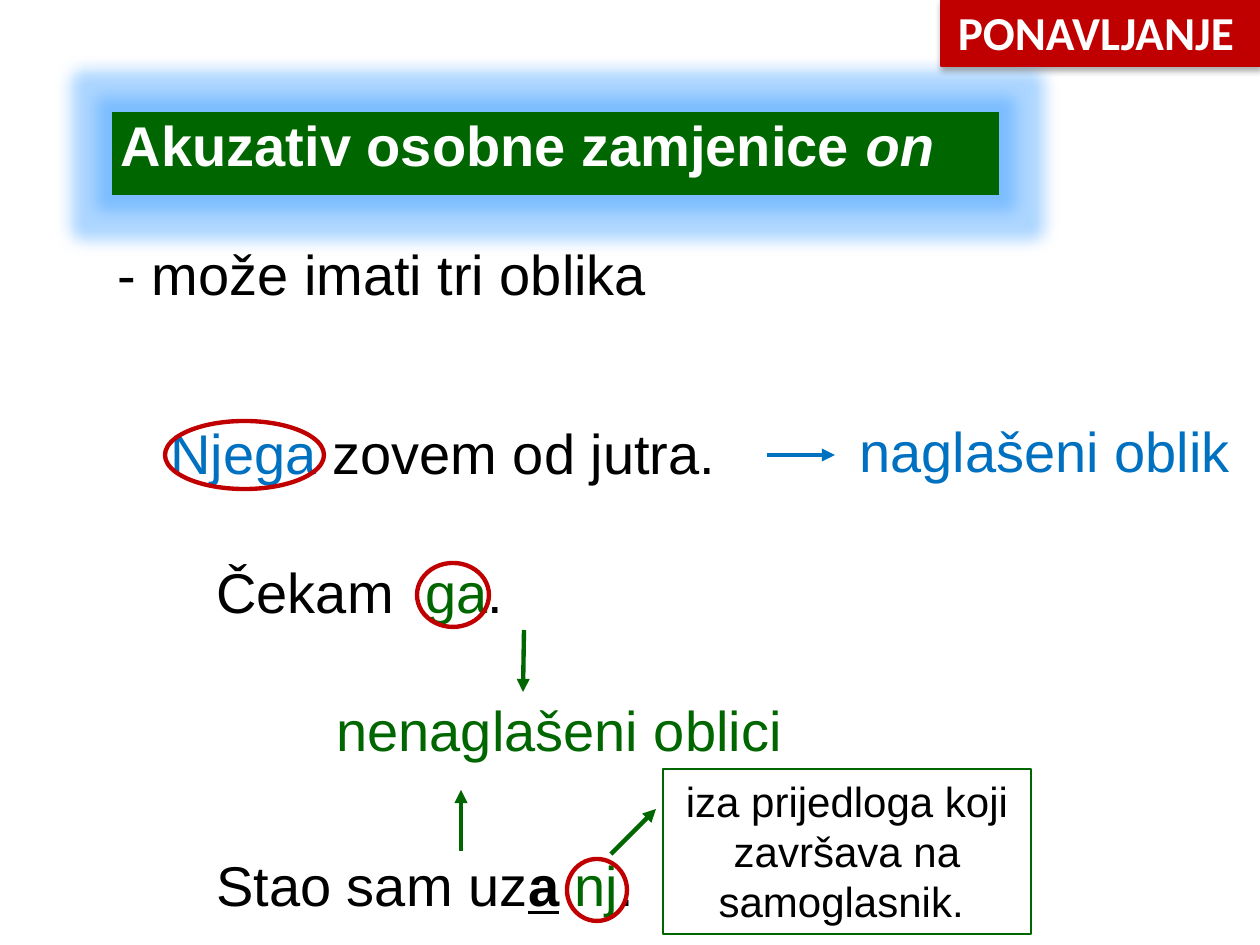
from lxml import etree
from pptx import Presentation
from pptx.dml.color import RGBColor
from pptx.enum.shapes import MSO_CONNECTOR, MSO_SHAPE
from pptx.enum.text import MSO_ANCHOR, MSO_AUTO_SIZE, PP_ALIGN
from pptx.oxml import parse_xml
from pptx.oxml.ns import qn
from pptx.util import Emu, Pt

RECT, OVAL = MSO_SHAPE.RECTANGLE, MSO_SHAPE.OVAL
STRAIGHT = MSO_CONNECTOR.STRAIGHT
LEFT, CENTER, RIGHT = PP_ALIGN.LEFT, PP_ALIGN.CENTER, PP_ALIGN.RIGHT
TOP, BOTTOM = MSO_ANCHOR.TOP, MSO_ANCHOR.BOTTOM
PX = 914400 / 126
GREEN, BLUE, RED, BLACK, WHITE = "006600", "0070C0", "C00000", "000000", "FFFFFF"
NS = 'xmlns:a="http://schemas.openxmlformats.org/drawingml/2006/main"'
GLOW = (f'<a:effectLst {NS}><a:glow rad="228600"><a:srgbClr val="3399FF">'
        '<a:alpha val="40000"/></a:srgbClr></a:glow></a:effectLst>')
SHADOW = (f'<a:effectLst {NS}><a:outerShdw blurRad="44450" dist="27940" dir="5400000" '
          'algn="ctr" rotWithShape="0"><a:srgbClr val="000000">'
          '<a:alpha val="32000"/></a:srgbClr></a:outerShdw></a:effectLst>')


def add_outline(kind, box, fill=None, line=None, width=2.5, effect=None):
    sp = s.shapes.add_shape(kind, *[Emu(round(v * PX)) for v in box])
    sp.shadow.inherit = False
    if fill:
        sp.fill.solid()
        sp.fill.fore_color.rgb = RGBColor.from_string(fill)
    else:
        sp.fill.background()
    if line:
        sp.line.color.rgb = RGBColor.from_string(line)
        sp.line.width = Pt(width)
    else:
        sp.line.fill.background()
    if effect:
        props = sp._element.spPr
        props.replace(props.find(qn("a:effectLst")), parse_xml(effect))
    return sp


def set_text(sp, runs, size=32, font="Arial", align=LEFT, anchor=TOP):
    """Fill a shape with one paragraph of (text, colour, format values) runs."""
    tf = sp.text_frame
    tf.word_wrap, tf.auto_size, tf.vertical_anchor = True, MSO_AUTO_SIZE.NONE, anchor
    p = tf.paragraphs[0]
    p.alignment = align
    for text, colour, fmt in runs:
        r = p.add_run()
        r.text = text
        r.font.color.rgb = RGBColor.from_string(colour)
        for name, value in {"name": font, "size": Pt(size), **fmt}.items():
            setattr(r.font, name, value)
    return p


prs = Presentation()
prs.slide_width, prs.slide_height = Emu(round(1260 * PX)), Emu(round(945 * PX))
s = prs.slides.add_slide(prs.slide_layouts[5])

# Title on its glowing bar
add_outline(RECT, (112, 112, 887, 83), fill=GREEN, effect=GLOW)
title = s.shapes.title
title.left, title.top, title.width, title.height = [
    Emu(round(v * PX)) for v in (112, 77, 944, 106)]
s.shapes._spTree.append(title._element)  # bring in front of the bar
p = set_text(title, [("Akuzativ osobne zamjenice ", WHITE, {"bold": True}),
                     ("on", WHITE, {"bold": True, "italic": True})], anchor=BOTTOM)
p.space_before = Pt(10)

# Examples and their labels
texts = [
    ((105, 233, 559, 81), [("- može imati tri oblika", BLACK, {})]),
    ((158, 412, 590, 81), [("Njega ", BLUE, {}), ("zovem od jutra.", BLACK, {})]),
    ((204, 551, 407, 81), [("Čekam  ", BLACK, {}), ("ga", GREEN, {}), (".", BLACK, {})]),
    ((204, 844, 446, 81), [("Stao sam uz", BLACK, {}),
                           ("a", BLACK, {"bold": True, "underline": True}),
                           (" ", BLACK, {}), ("nj", GREEN, {}), (".", BLACK, {})]),
    ((847, 410, 405, 81), [("naglašeni oblik", BLUE, {})]),
    ((324, 689, 474, 81), [("nenaglašeni oblici", GREEN, {})]),
]
for box, runs in texts:
    set_text(s.shapes.add_textbox(*[Emu(round(v * PX)) for v in box]), runs)

# Rings around the pronouns
for ring in [(165, 421, 159, 68), (567, 859, 60, 62), (417, 563, 72, 64)]:
    add_outline(OVAL, ring, line=RED)

# Corner tag
add_outline(RECT, (941, 0, 319, 66), fill=RED, line=RED, width=1, effect=SHADOW)
tag = s.shapes.add_textbox(*[Emu(round(v * PX)) for v in (941, -21, 302, 87)])
p = set_text(tag, [("PONAVLJANJE", WHITE, {"bold": True})],
             size=27, font="Calibri", align=RIGHT, anchor=BOTTOM)
p.line_spacing = 0.9

for sp in (title, tag):
    tf = sp.text_frame
    tf.margin_left = tf.margin_right = Emu(round(9 * PX))
    tf.margin_top = tf.margin_bottom = Emu(round(5 * PX))

# Rule box
rule = add_outline(RECT, (663, 769, 368, 165), line=GREEN, width=0.75)
set_text(rule, [("iza prijedloga koji završava na samoglasnik. ", BLACK, {})],
         size=24, align=CENTER)

# Arrows
arrows = [((767, 455, 835, 455), BLUE), ((524, 630, 523, 692), GREEN),
          ((461, 851, 461, 790), GREEN), ((611, 854, 656, 809), GREEN)]
for ends, colour in arrows:
    arrow = s.shapes.add_connector(STRAIGHT, *[Emu(round(v * PX)) for v in ends])
    arrow.line.color.rgb = RGBColor.from_string(colour)
    arrow.line.width = Pt(2.5)
    etree.SubElement(arrow.line._get_or_add_ln(), qn("a:tailEnd"), type="triangle")
    etree.SubElement(arrow._element.spPr, qn("a:effectLst"))

prs.save("out.pptx")
